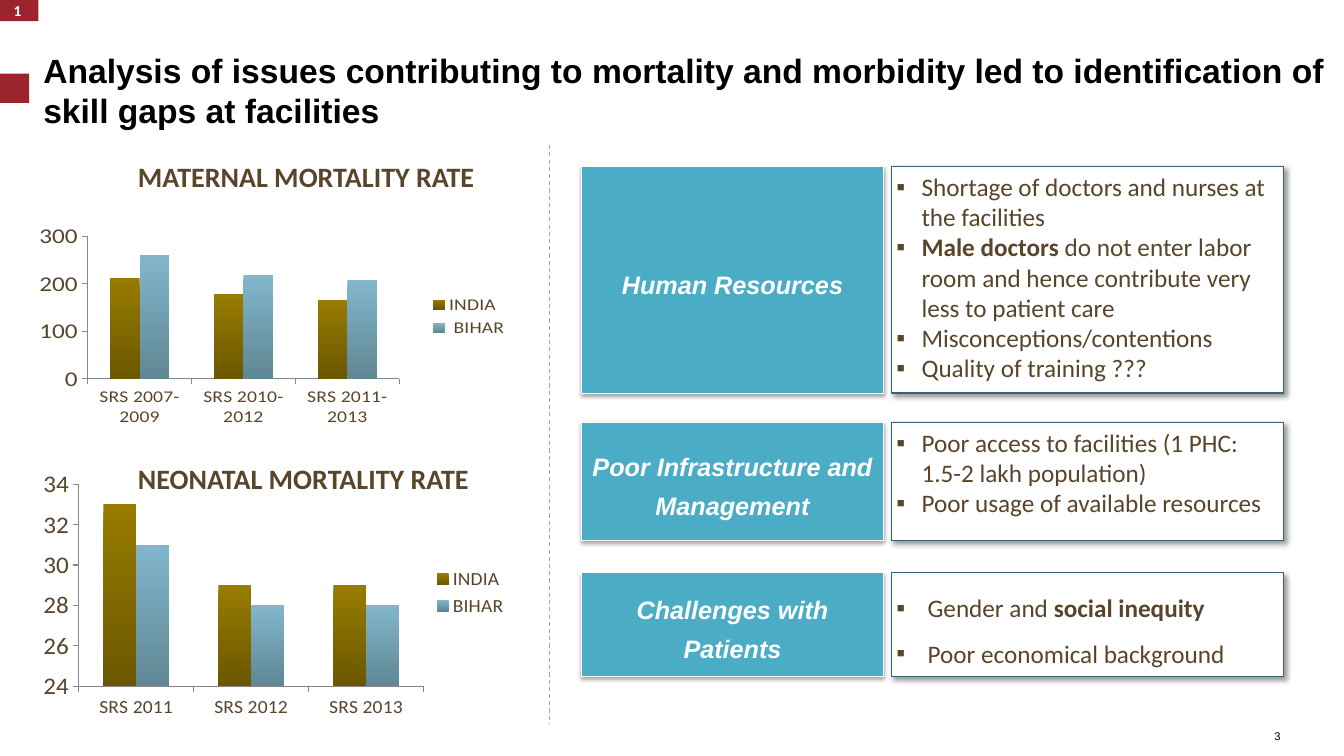
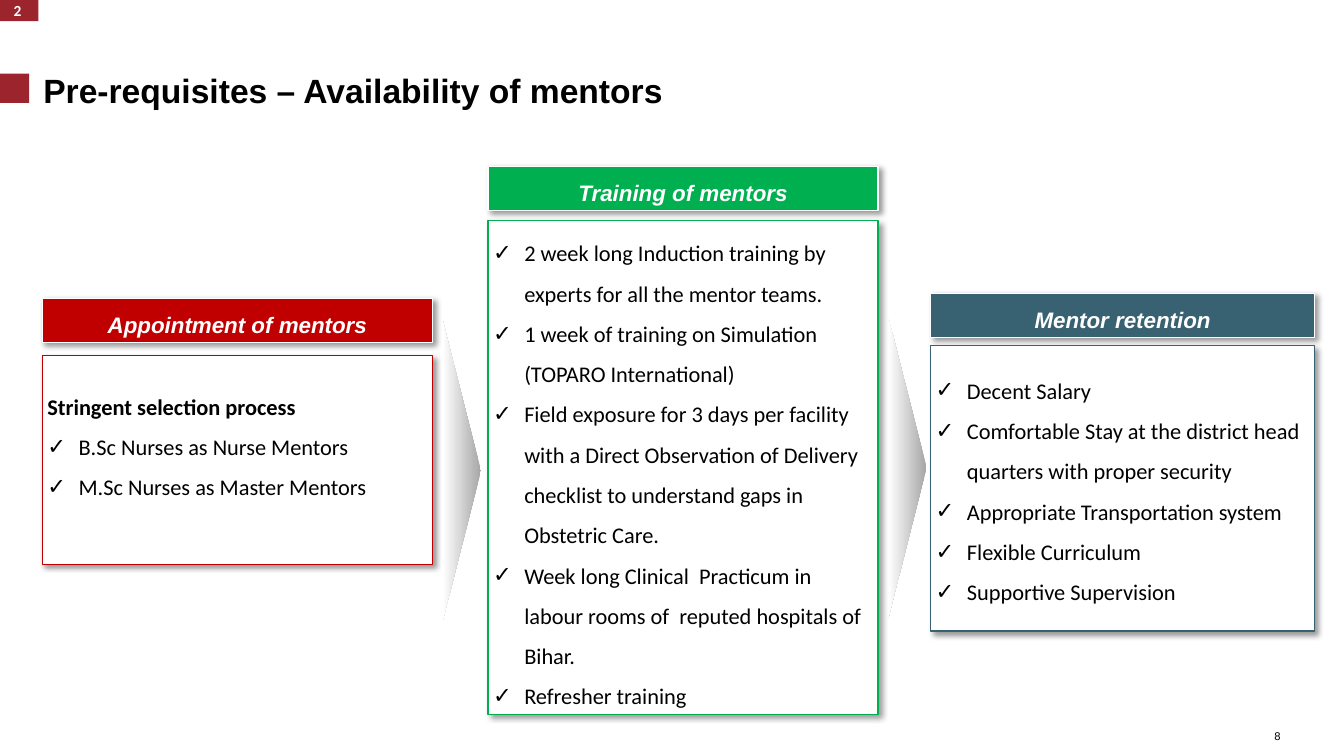
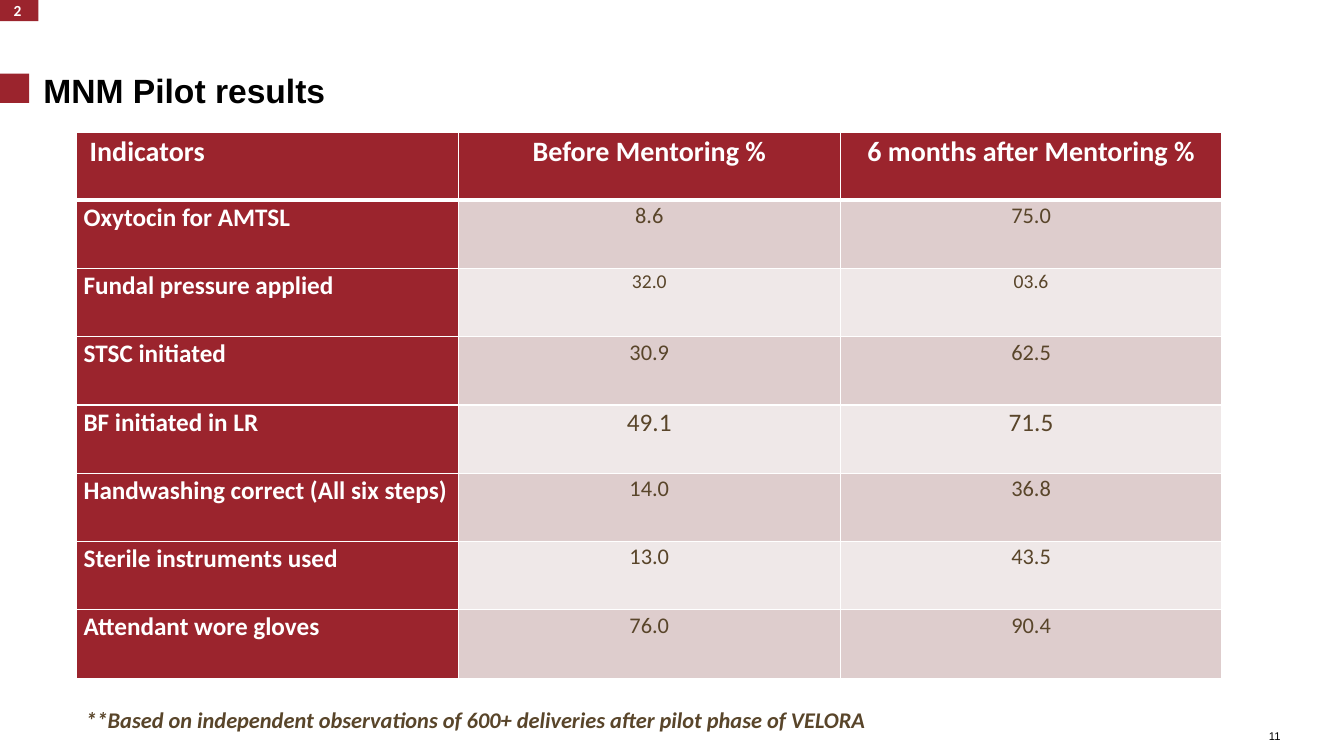
from dataclasses import dataclass

from lxml import etree
from pptx import Presentation
from pptx.chart.data import CategoryChartData
from pptx.dml.color import RGBColor
from pptx.enum.chart import XL_CHART_TYPE, XL_LEGEND_POSITION, XL_TICK_MARK
from pptx.enum.dml import MSO_LINE
from pptx.enum.shapes import MSO_CONNECTOR, MSO_SHAPE
from pptx.enum.text import MSO_ANCHOR, PP_ALIGN
from pptx.oxml.ns import qn
from pptx.util import Inches, Pt

RECT = MSO_SHAPE.RECTANGLE
WEDGE = MSO_SHAPE.ISOSCELES_TRIANGLE
LEFT, CENTER, RIGHT, JUST = PP_ALIGN.LEFT, PP_ALIGN.CENTER, PP_ALIGN.RIGHT, PP_ALIGN.JUSTIFY
TOP, MIDDLE, BOTTOM = MSO_ANCHOR.TOP, MSO_ANCHOR.MIDDLE, MSO_ANCHOR.BOTTOM
COLUMN = XL_CHART_TYPE.COLUMN_CLUSTERED
SIDE = XL_LEGEND_POSITION.RIGHT
OUT = XL_TICK_MARK.OUTSIDE
DASH = MSO_LINE.DASH
STRAIGHT = MSO_CONNECTOR.STRAIGHT

HUES = {
    "red": "9B242D", "brown": "59452A", "black": "000000", "white": "FFFFFF",
    "teal": "4BACC6", "slate": "386272", "crimson": "C00000", "green": "00B050",
    "gray": "A6A6A6", "axis": "868686", "rose": "DECDCD", "blush": "EFE8E8",
    "gold": "977C00", "umber": "6B5700", "sky": "82B6CC", "steel": "5F8794",
}


@dataclass(frozen=True)
class Style:
    size: float
    hue: str = "brown"
    bold: bool = False
    slant: bool = False
    font: str = "Calibri"
    align: PP_ALIGN = LEFT
    space: float = 1.0
    after: float = 0
    mark: str = ""
    indent: float = 0


@dataclass(frozen=True)
class Item:
    text: str
    bold: str = ""
    mark: bool = True


@dataclass(frozen=True)
class Shade:
    alpha: int
    blur: float
    dist: float
    angle: int


@dataclass(frozen=True)
class Topic:
    label: str
    top: float
    height: float
    style: Style
    items: list[Item]


@dataclass(frozen=True)
class Panel:
    label: str
    hue: str
    left: float
    width: float
    top: float
    body: float
    height: float
    items: list[Item]
    lift: float = 0


@dataclass(frozen=True)
class Plot:
    box: tuple
    inner: tuple
    scale: tuple
    cats: list[str]
    rows: dict


HEAD = Style(24, "black", True, font="Arial")
TAG = Style(11, "white", True, align=CENTER)
FOOT = Style(8, "black", font="Arial", align=RIGHT)
NAME = Style(20, bold=True)
LABEL = Style(18, "white", True, True, "Arial", CENTER, 1.3)
BAND = Style(16, "white", True, True, "Arial", CENTER, 1.3)
FACT = Style(18, mark="▪", indent=0.25)
WIDE = Style(18, mark="▪", indent=0.31, space=1.5)
CHECK = Style(16, "black", mark="✓", indent=0.31, space=1.5)
NOTE = Style(16, bold=True, slant=True)
SOFT = Shade(35, 3.1, 1.8, 90)
DEEP = Shade(40, 4, 3, 45)


def color(name: str) -> RGBColor:
    return RGBColor.from_string(HUES[name])


def node(parent, tag: str, **attrs):
    return etree.SubElement(parent, qn(tag), {k: str(v) for k, v in attrs.items()})


def paint(run, style: Style, bold: bool) -> None:
    font = run.font
    font.name, font.size = style.font, Pt(style.size)
    font.bold, font.italic = bold, style.slant
    font.color.rgb = color(style.hue)


def write(frame, items: list[Item], style: Style, anchor=TOP, pad=None) -> None:
    frame.word_wrap = True
    frame.vertical_anchor = anchor
    if pad is not None:
        frame.margin_left = frame.margin_right = Inches(pad)
        frame.margin_top = frame.margin_bottom = Inches(pad)
    for i, item in enumerate(items):
        para = frame.paragraphs[0] if i == 0 else frame.add_paragraph()
        pre, key, post = item.text.partition(item.bold) if item.bold else (item.text, "", "")
        para.alignment = style.align
        para.line_spacing = style.space
        para.space_after = Pt(style.after)
        for text in (pre, key, post):
            if text:
                run = para.add_run()
                run.text = text
                paint(run, style, style.bold or text == key)
        if style.mark and item.mark:
            props = para._p.get_or_add_pPr()
            props.set("marL", str(Inches(style.indent)))
            props.set("indent", str(-Inches(style.indent)))
            node(props, "a:buFont", typeface="Arial")
            node(props, "a:buChar", char=style.mark)


def label(slide, box: tuple, text: str, style: Style, anchor=TOP, pad=None) -> None:
    shape = slide.shapes.add_textbox(*map(Inches, box))
    write(shape.text_frame, [Item(text)], style, anchor, pad)


def block(slide, box: tuple, fill: str, edge: str = "", width: float = 1,
          shade: Shade | None = None, kind=RECT):
    shape = slide.shapes.add_shape(kind, *map(Inches, box))
    shape.fill.solid()
    shape.fill.fore_color.rgb = color(fill)
    if edge:
        shape.line.color.rgb = color(edge)
        shape.line.width = Pt(width)
    else:
        shape.line.fill.background()
    shape.shadow.inherit = False
    if shade:
        glow = node(shape._element.spPr.find(qn("a:effectLst")), "a:outerShdw",
                    blurRad=Pt(shade.blur), dist=Pt(shade.dist),
                    dir=shade.angle * 60000, algn="tl", rotWithShape=0)
        tint = node(glow, "a:srgbClr", val=HUES["black"])
        node(tint, "a:alpha", val=shade.alpha * 1000)
    return shape


def blend(fill, first: str, last: str) -> None:
    fill.gradient()
    fill.gradient_angle = 270
    for stop, hue in zip(fill.gradient_stops, (first, last)):
        stop.color.rgb = color(hue)


def start(deck, title: str, tag: str, page: str):
    slide = deck.slides.add_slide(deck.slide_layouts[6])
    block(slide, (0, 0.73, 0.29, 0.29), "red")
    label(slide, (0.43, 0.7, 12.9, 0.38), title, HEAD, MIDDLE, 0)
    badge = block(slide, (-0.03, -0.01, 0.41, 0.22), "red")
    write(badge.text_frame, [Item(tag)], TAG, MIDDLE)
    label(slide, (12.42, 7.14, 0.28, 0.23), page, FOOT, BOTTOM, 0)
    return slide


def graph(slide, plot: Plot) -> None:
    data = CategoryChartData()
    data.categories = plot.cats
    for name, vals in plot.rows.items():
        data.add_series(name, vals)
    chart = slide.shapes.add_chart(COLUMN, *map(Inches, plot.box), data).chart
    chart.has_title = False
    chart.font.name, chart.font.size = "Calibri", Pt(18)
    chart.font.color.rgb = color("brown")
    chart.has_legend = True
    chart.legend.position = SIDE
    chart.legend.include_in_layout = True
    chart.legend.font.size = Pt(14)
    chart.legend.font.color.rgb = color("brown")
    for axis in (chart.category_axis, chart.value_axis):
        axis.has_major_gridlines = False
        axis.major_tick_mark = OUT
        axis.format.line.color.rgb = color("axis")
    chart.category_axis.tick_labels.font.size = Pt(14)
    axis = chart.value_axis
    axis.minimum_scale, axis.maximum_scale, axis.major_unit = plot.scale
    bars = chart.plots[0]
    bars.gap_width = 150
    bars.vary_by_categories = False
    for series, pair in zip(bars.series, (("gold", "umber"), ("sky", "steel"))):
        blend(series.format.fill, *pair)
    area = chart._chartSpace.chart.plotArea
    for old in area.findall(qn("c:layout")):
        area.remove(old)
    outer = etree.Element(qn("c:layout"))
    area.insert(0, outer)
    layout = node(outer, "c:manualLayout")
    node(layout, "c:layoutTarget", val="inner")
    for key in ("xMode", "yMode"):
        node(layout, f"c:{key}", val="edge")
    for key, val in zip("xywh", plot.inner):
        node(layout, f"c:{key}", val=val)


def issues(deck) -> None:
    slide = start(deck, "Analysis of issues contributing to mortality and morbidity led to "
                  "identification of skill gaps at facilities", "1", "3")
    label(slide, (1.27, 1.53, 4.1, 0.44), "MATERNAL MORTALITY RATE", NAME)
    label(slide, (1.27, 4.53, 4.1, 0.44), "NEONATAL MORTALITY RATE", NAME)
    topics = [
        Topic("Human Resources", 1.65, 2.25, FACT, [
            Item("Shortage of doctors and nurses at the facilities"),
            Item("Male doctors do not enter labor room and hence contribute very "
                 "less to patient care", "Male doctors"),
            Item("Misconceptions/contentions"),
            Item("Quality of training ???")]),
        Topic("Poor Infrastructure and Management", 4.19, 1.17, FACT, [
            Item("Poor access to facilities (1 PHC: 1.5-2 lakh population)"),
            Item("Poor usage of available resources")]),
        Topic("Challenges with Patients", 5.68, 1.03, WIDE, [
            Item("Gender and social inequity", "social inequity"),
            Item("Poor economical background")]),
    ]
    for topic in topics:
        left = block(slide, (5.77, topic.top, 2.99, topic.height), "teal", "white", 0.75, SOFT)
        write(left.text_frame, [Item(topic.label)], LABEL, MIDDLE, 0.05)
        right = block(slide, (8.84, topic.top, 3.89, topic.height), "white", "slate", 1, DEEP)
        write(right.text_frame, topic.items, topic.style, TOP, 0.05)
    rule = slide.shapes.add_connector(STRAIGHT, Inches(5.45), Inches(1.44),
                                      Inches(5.45), Inches(7.18))
    rule.line.color.rgb = color("gray")
    rule.line.width = Pt(0.75)
    rule.line.dash_style = DASH
    node(rule._element.spPr, "a:effectLst")
    plots = [
        Plot((0.39, 2.22, 4.76, 2.02), (0.1, 0.03, 0.65, 0.84), (0, 300, 100),
             ["SRS 2007-2009", "SRS 2010- 2012", "SRS 2011-2013"],
             {"INDIA": (212, 178, 167), " BIHAR": (261, 219, 208)}),
        Plot((0.43, 4.66, 4.71, 2.47), (0.07, 0.04, 0.73, 0.86), (24, 34, 2),
             ["SRS 2011", "SRS 2012", "SRS 2013"],
             {"INDIA": (33, 29, 29), "BIHAR": (31, 28, 28)}),
    ]
    for plot in plots:
        graph(slide, plot)


def mentors(deck) -> None:
    slide = start(deck, "Pre-requisites – Availability of mentors", "2", "8")
    panels = [
        Panel("Appointment of mentors", "crimson", 0.42, 3.87, 2.96, 3.53, 2.07, [
            Item("Stringent selection process", "Stringent selection process", False),
            Item("B.Sc Nurses as Nurse Mentors"),
            Item("M.Sc Nurses as Master Mentors")], 0.4),
        Panel("Mentor retention", "slate", 9.23, 3.81, 2.91, 3.43, 2.83, [
            Item("Decent Salary"),
            Item("Comfortable Stay at the district head quarters with proper security"),
            Item("Appropriate Transportation system"),
            Item("Flexible Curriculum"),
            Item("Supportive Supervision")], 0.08),
        Panel("Training of mentors", "green", 4.84, 3.87, 1.65, 2.19, 4.9, [
            Item("2 week long Induction training by experts for all the mentor teams."),
            Item("1 week of training on Simulation (TOPARO International)"),
            Item("Field exposure for 3 days per facility with a Direct Observation of "
                 "Delivery checklist to understand gaps in Obstetric Care."),
            Item("Week long Clinical  Practicum in labour rooms of  reputed hospitals "
                 "of Bihar."),
            Item("Refresher training")]),
    ]
    for panel in panels:
        band = block(slide, (panel.left, panel.top, panel.width, 0.44),
                     panel.hue, "white", 1, DEEP)
        write(band.text_frame, [Item(panel.label)], BAND, MIDDLE, 0.05)
        body = block(slide, (panel.left, panel.body, panel.width, panel.height),
                     "white", panel.hue, 1, DEEP)
        write(body.text_frame, panel.items, CHECK, MIDDLE, 0.05)
        body.text_frame.margin_bottom = Inches(0.05 + panel.lift)
    for left, top in ((3.09, 4.48), (7.51, 4.45)):
        wedge = block(slide, (left, top, 2.98, 0.38), "gray", kind=WEDGE)
        wedge.rotation = 90
        blend(wedge.fill, "gray", "white")


def border(cell, top: float, bottom: float) -> None:
    props = cell._tc.get_or_add_tcPr()
    for side, width in (("L", 1), ("R", 1), ("T", top), ("B", bottom)):
        line = node(props, f"a:ln{side}", w=Pt(width))
        node(node(line, "a:solidFill"), "a:srgbClr", val=HUES["white"])


def results(deck) -> None:
    slide = start(deck, "MNM Pilot results", "2", "11")
    rows = [
        ("Indicators", "Before Mentoring %", "6 months after Mentoring %", 20),
        ("Oxytocin for AMTSL", "8.6", "75.0", 16),
        ("Fundal pressure applied", "32.0", "03.6", 14),
        ("STSC initiated", "30.9", "62.5", 16),
        ("BF initiated in LR", "49.1", "71.5", 18),
        ("Handwashing correct (All six steps)", "14.0", "36.8", 16),
        ("Sterile instruments used", "13.0", "43.5", 16),
        ("Attendant wore gloves", "76.0", "90.4", 16),
    ]
    box = map(Inches, (0.76, 1.31, 11.36, 5.42))
    table = slide.shapes.add_table(len(rows), 3, *box).table
    for r, (*texts, size) in enumerate(rows):
        for c, text in enumerate(texts):
            cell = table.cell(r, c)
            head = r == 0 or c == 0
            style = Style(18 if r and c == 0 else size, "white" if head else "brown", head,
                          align=CENTER if c else JUST, space=1.07, after=8)
            write(cell.text_frame, [Item(text)], style)
            cell.margin_left = Inches(0.07 if r or c else 0.13)
            cell.margin_right = Inches(0.07)
            cell.margin_top = cell.margin_bottom = 0
            border(cell, 3 if r == 1 else 1, 3 if r == 0 else 1)
            cell.fill.solid()
            cell.fill.fore_color.rgb = color("red" if head else "rose" if r % 2 else "blush")
    label(slide, (0.75, 6.96, 10.67, 0.37), "**Based on independent observations of 600+ "
          "deliveries after pilot phase of VELORA", NOTE)


def main() -> None:
    deck = Presentation()
    deck.slide_width, deck.slide_height = Inches(13.33), Inches(7.5)
    issues(deck)
    mentors(deck)
    results(deck)
    deck.save("out.pptx")


if __name__ == "__main__":
    main()
